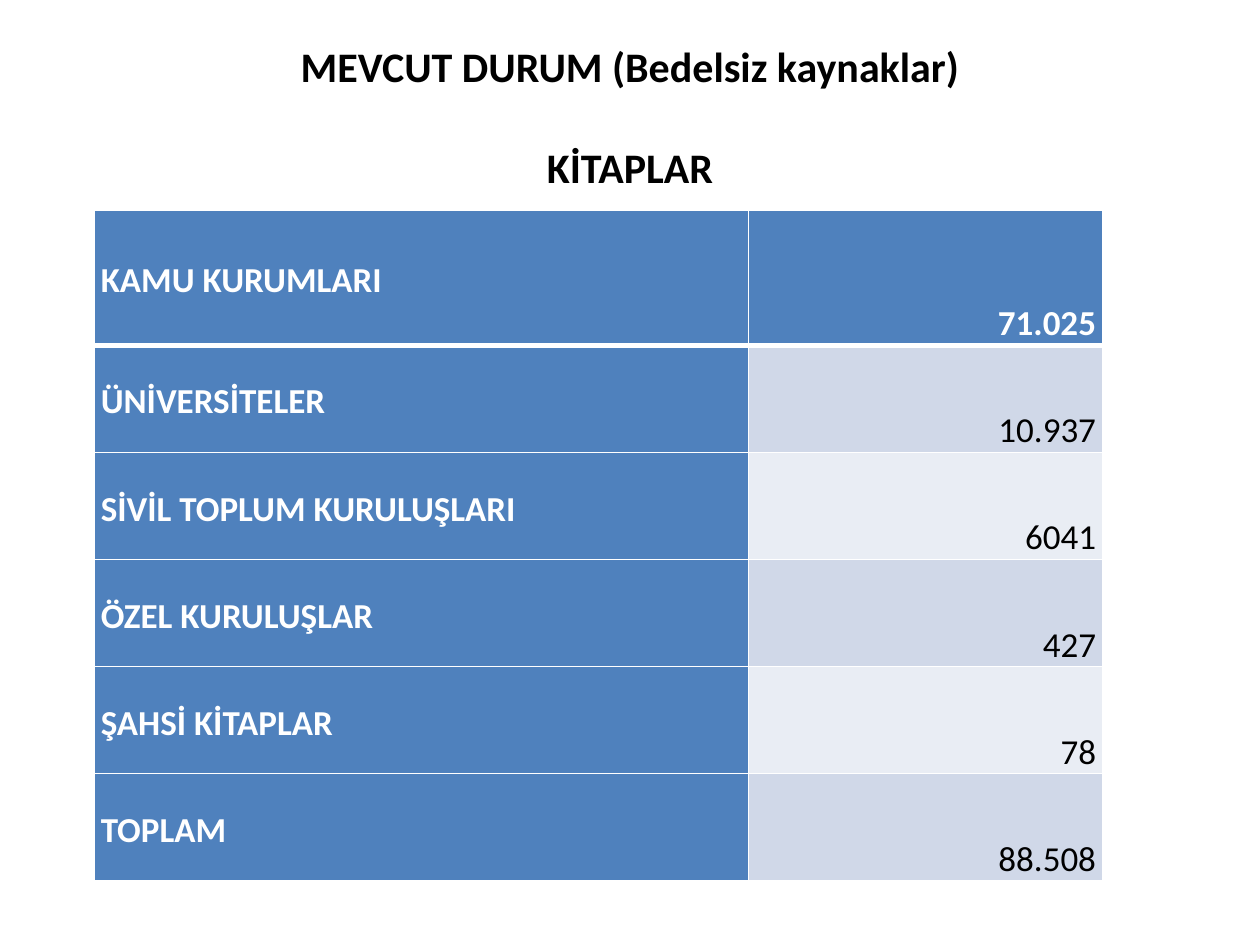
import pptx
import pptx.util
import pptx.dml.color
import pptx.enum.text
import pptx.oxml
import pptx.oxml.ns

Inches = pptx.util.Inches
Pt = pptx.util.Pt
ALIGN = pptx.enum.text.PP_ALIGN
ANCHOR = pptx.enum.text.MSO_ANCHOR

COLORS = {
    "black": "000000",
    "white": "FFFFFF",
    "blue": "4F81BD",
    "band_dark": "D0D8E8",
    "band_light": "E9EDF4",
}

TITLE_LINES = ["MEVCUT DURUM (Bedelsiz kaynaklar)", "KİTAPLAR"]
BOOK_COUNTS = [
    ("KAMU KURUMLARI", "71.025"),
    ("ÜNİVERSİTELER", "10.937"),
    ("SİVİL TOPLUM KURULUŞLARI", "6041"),
    ("ÖZEL KURULUŞLAR", "427"),
    ("ŞAHSİ KİTAPLAR", "78"),
    ("TOPLAM", "88.508"),
]


def apply_format(target, values):
    for name, value in values.items():
        setattr(target, name, value)


class SlideBuilder:
    font_name = "Calibri"
    title_size = 24
    table_size = 20

    def __init__(self, presentation):
        self.slide = presentation.slides.add_slide(presentation.slide_layouts[5])

    def color(self, name):
        return pptx.dml.color.RGBColor.from_string(COLORS[name])

    def add_text(self, paragraph, text, size, color, bold):
        run = paragraph.add_run()
        run.text = text
        apply_format(run.font, {"name": self.font_name, "size": Pt(size), "bold": bold})
        run.font.color.rgb = self.color(color)

    def title(self, lines, left, top, width, height):
        shape = self.slide.shapes.title
        apply_format(shape, {
            "left": Inches(left), "top": Inches(top),
            "width": Inches(width), "height": Inches(height),
        })
        frame = shape.text_frame
        apply_format(frame, {
            "word_wrap": True,
            "auto_size": pptx.enum.text.MSO_AUTO_SIZE.NONE,
            "vertical_anchor": ANCHOR.MIDDLE,
        })
        for index, line in enumerate(lines):
            paragraph = frame.add_paragraph() if index else frame.paragraphs[0]
            paragraph.alignment = ALIGN.CENTER
            paragraph.space_before = Pt(29 if index else 0)
            self.add_text(paragraph, line, self.title_size, "black", True)

    def borders(self, cell, widths):
        properties = cell._tc.get_or_add_tcPr()
        for index, (side, width) in enumerate(widths.items()):
            line = pptx.oxml.parse_xml(
                f'<a:ln{side} {pptx.oxml.ns.nsdecls("a")} w="{Pt(width)}"><a:solidFill>'
                f'<a:srgbClr val="{COLORS["white"]}"/></a:solidFill></a:ln{side}>'
            )
            properties.insert(index, line)

    def cell(self, cell, text, fill, color, bold, alignment, anchor):
        apply_format(cell, {
            "margin_left": Inches(0.05), "margin_right": Inches(0.05),
            "margin_top": 0, "margin_bottom": 0, "vertical_anchor": anchor,
        })
        cell.fill.solid()
        cell.fill.fore_color.rgb = self.color(fill)
        paragraph = cell.text_frame.paragraphs[0]
        apply_format(paragraph, {"alignment": alignment, "line_spacing": 1.15})
        self.add_text(paragraph, text, self.table_size, color, bold)

    def table(self, rows, left, top, column_widths, row_heights):
        table = self.slide.shapes.add_table(
            len(rows), len(column_widths), Inches(left), Inches(top),
            Inches(sum(column_widths)), Inches(sum(row_heights)),
        ).table
        for column, width in zip(table.columns, column_widths):
            column.width = Inches(width)
        for row, height in zip(table.rows, row_heights):
            row.height = Inches(height)
        for index, (label, count) in enumerate(rows):
            header = index == 0
            band = "band_dark" if index % 2 else "band_light"
            label_cell, count_cell = table.cell(index, 0), table.cell(index, 1)
            self.cell(label_cell, label, "blue", "white", True, ALIGN.LEFT, ANCHOR.MIDDLE)
            self.cell(count_cell, count, "blue" if header else band,
                      "white" if header else "black", header, ALIGN.RIGHT, ANCHOR.BOTTOM)
            widths = {"L": 1, "R": 1, "T": 3 if index == 1 else 1, "B": 3 if header else 1}
            for cell in (label_cell, count_cell):
                self.borders(cell, widths)


def main():
    presentation = pptx.Presentation()
    presentation.slide_width = Inches(10)
    presentation.slide_height = Inches(7.5)
    builder = SlideBuilder(presentation)
    builder.title(TITLE_LINES, 0.5, 0.3, 9, 1.25)
    row_heights = [1.07] + [0.85] * (len(BOOK_COUNTS) - 1)
    builder.table(BOOK_COUNTS, 0.75, 1.67, [5.19, 2.81], row_heights)
    presentation.save("out.pptx")


if __name__ == "__main__":
    main()
